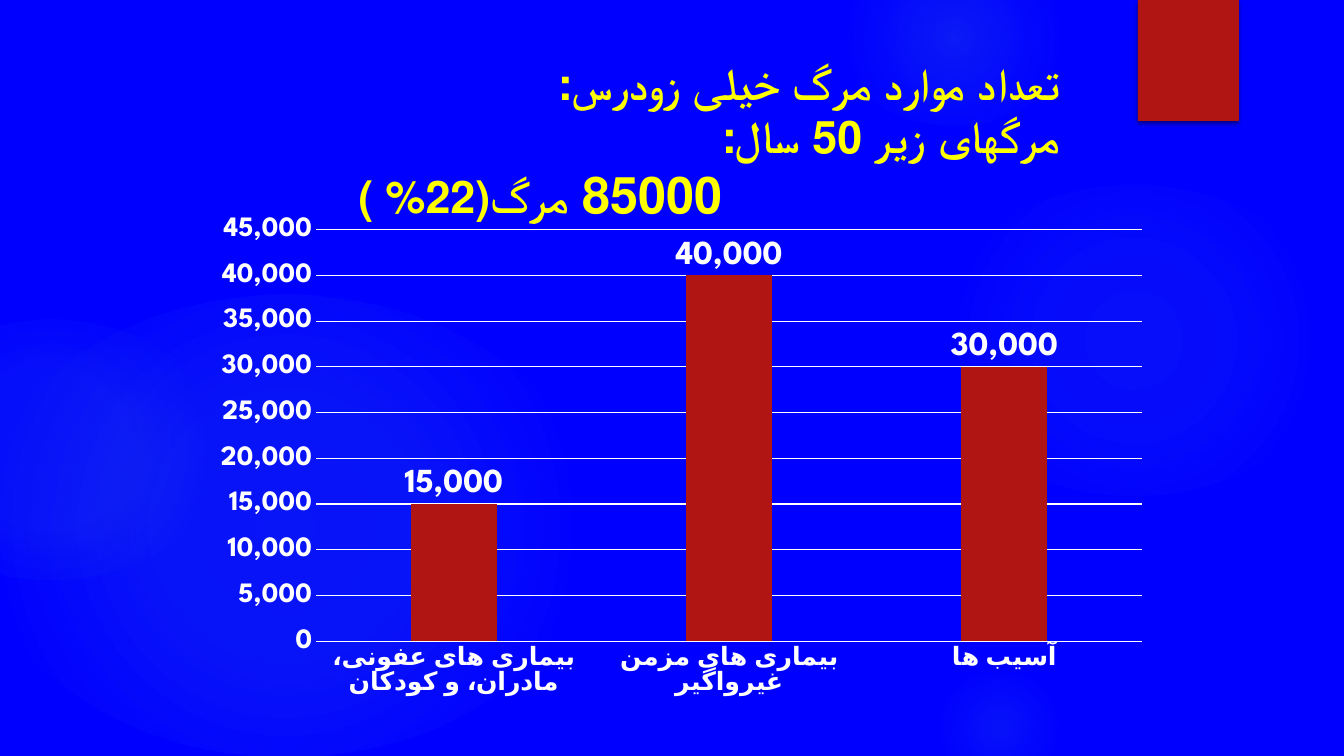
from lxml import etree
from pptx import Presentation
from pptx import util as u
from pptx.chart import data as cd
from pptx.dml import color
from pptx.enum import chart as ce, shapes, text
from pptx.oxml import ns

THEME = dict(font="League Spartan", back="0000FF", glow="50B9C1", bar="B01513",
             head="FFFF00", ink="FFFFFF", shade="000000",
             title=32, count=36, base=10, cat=18, val=20, label=24, line=0.75)

HEAD = ["تعداد موارد مرگ خیلی زودرس:\vمرگهای زیر 50 سال:"]
TOTAL = ["85000", " مرگ(22% )"]
DEATHS = {
    "بیماری های عفونی، مادران، و کودکان": 15000,
    "بیماری های مزمن غیرواگیر": 40000,
    "آسیب ها": 30000,
}
GLOWS = [
    (661.7, 131.8, 296, [(0, 7), (36, 6), (69, 0)]),
    (597.6, -36, 168, [(0, 14), (36, 7), (73, 0)]),
    (661.7, 480.2, 104, [(0, 9), (36, 5), (66, 0)]),
    (-15.8, 210.2, 440, [(0, 11), (36, 10), (75, 0)]),
    (-87.8, 228.2, 248, [(0, 8), (36, 8), (72, 0)]),
]
RATIO = 0.75
TAB = (812.9, 0, 72, 86.4)
HEADBOX = (144, 36, 620.6, 78.5)
TOTALBOX = (223, 113, 300, 52)
PLOT = (144, 147.6, 685.4, 356.4)


def rgb(name):
    return color.RGBColor.from_string(THEME[name])


def pts(box):
    return [u.Pt(n) for n in box]


def node(up, tag, **attrs):
    return etree.SubElement(up, ns.qn("a:" + tag), {k: str(v) for k, v in attrs.items()})


def tint(up, name, pct):
    node(node(up, "srgbClr", val=THEME[name]), "alpha", val=pct * 1000)


def shape(slide, kind, box):
    item = slide.shapes.add_shape(kind, *pts(box))
    item.shadow.inherit = False
    item.line.fill.background()
    return item


def glow(slide, left, top, wide, stops):
    oval = shape(slide, shapes.MSO_SHAPE.OVAL, (left, top, wide, wide * RATIO))
    prop = oval.element.spPr
    grad = node(prop, "gradFill", rotWithShape=1)
    prop.find(ns.qn("a:prstGeom")).addnext(grad)
    steps = node(grad, "gsLst")
    for pos, alpha in stops:
        tint(node(steps, "gs", pos=pos * 1000), "glow", alpha)
    node(node(grad, "path", path="circle"), "fillToRect", l=50000, t=50000, r=50000, b=50000)


def tab(slide):
    item = shape(slide, shapes.MSO_SHAPE.RECTANGLE, TAB)
    item.fill.solid()
    item.fill.fore_color.rgb = rgb("bar")
    effect = item.element.spPr.find(ns.qn("a:effectLst"))
    cast = node(effect, "outerShdw", blurRad=u.Pt(3), dist=u.Pt(2), dir=5400000, rotWithShape=0)
    tint(cast, "shade", 45)


def style(font, size, name="ink", bold=True):
    font.name, font.size, font.bold = THEME["font"], u.Pt(THEME[size]), bold
    font.color.rgb = rgb(name)


def write(slide, box, parts, sizes):
    frame = slide.shapes.add_textbox(*pts(box)).text_frame
    frame.word_wrap = True
    frame.vertical_anchor = text.MSO_ANCHOR.TOP
    para = frame.paragraphs[0]
    para.alignment = text.PP_ALIGN.RIGHT
    para._p.get_or_add_pPr().set("rtl", "1")
    if len(parts) == 1:
        para.text = parts[0]
    else:
        for part in parts:
            para.add_run().text = part
    for run, size in zip(para.runs, sizes):
        style(run.font, size, "head")


def rule(fmt):
    fmt.color.rgb = rgb("ink")
    fmt.width = u.Pt(THEME["line"])


def plot(slide):
    data = cd.CategoryChartData(number_format="#,##0")
    data.categories = list(DEATHS)
    data.add_series("Series 1", list(DEATHS.values()))
    chart = slide.shapes.add_chart(ce.XL_CHART_TYPE.COLUMN_CLUSTERED, *pts(PLOT), data).chart
    chart.has_legend = chart.has_title = False
    style(chart.font, "base", bold=False)
    for axis, size in ((chart.category_axis, "cat"), (chart.value_axis, "val")):
        axis.major_tick_mark = axis.minor_tick_mark = ce.XL_TICK_MARK.NONE
        style(axis.tick_labels.font, size)
    rule(chart.category_axis.format.line)
    side = chart.value_axis
    side.minimum_scale, side.maximum_scale, side.major_unit = 0, 45000, 5000
    side.format.line.fill.background()
    side.has_major_gridlines = True
    rule(side.major_gridlines.format.line)
    side.tick_labels.number_format = "#,##0"
    side.tick_labels.number_format_is_linked = False
    bars = chart.plots[0]
    bars.gap_width, bars.overlap, bars.vary_by_categories = 219, -27, False
    fill = bars.series[0].format.fill
    fill.solid()
    fill.fore_color.rgb = rgb("bar")
    tags = bars.series[0].data_labels
    tags.show_value = True
    tags.position = ce.XL_LABEL_POSITION.OUTSIDE_END
    tags.number_format, tags.number_format_is_linked = "#,##0", False
    style(tags.font, "label")


def main():
    deck = Presentation()
    deck.slide_width, deck.slide_height = u.Pt(960), u.Pt(540)
    slide = deck.slides.add_slide(deck.slide_layouts[6])
    slide.background.fill.solid()
    slide.background.fill.fore_color.rgb = rgb("back")
    for spot in GLOWS:
        glow(slide, *spot)
    tab(slide)
    write(slide, HEADBOX, HEAD, ["title", "title"])
    write(slide, TOTALBOX, TOTAL, ["count", "title"])
    plot(slide)
    deck.save("out.pptx")


if __name__ == "__main__":
    main()
